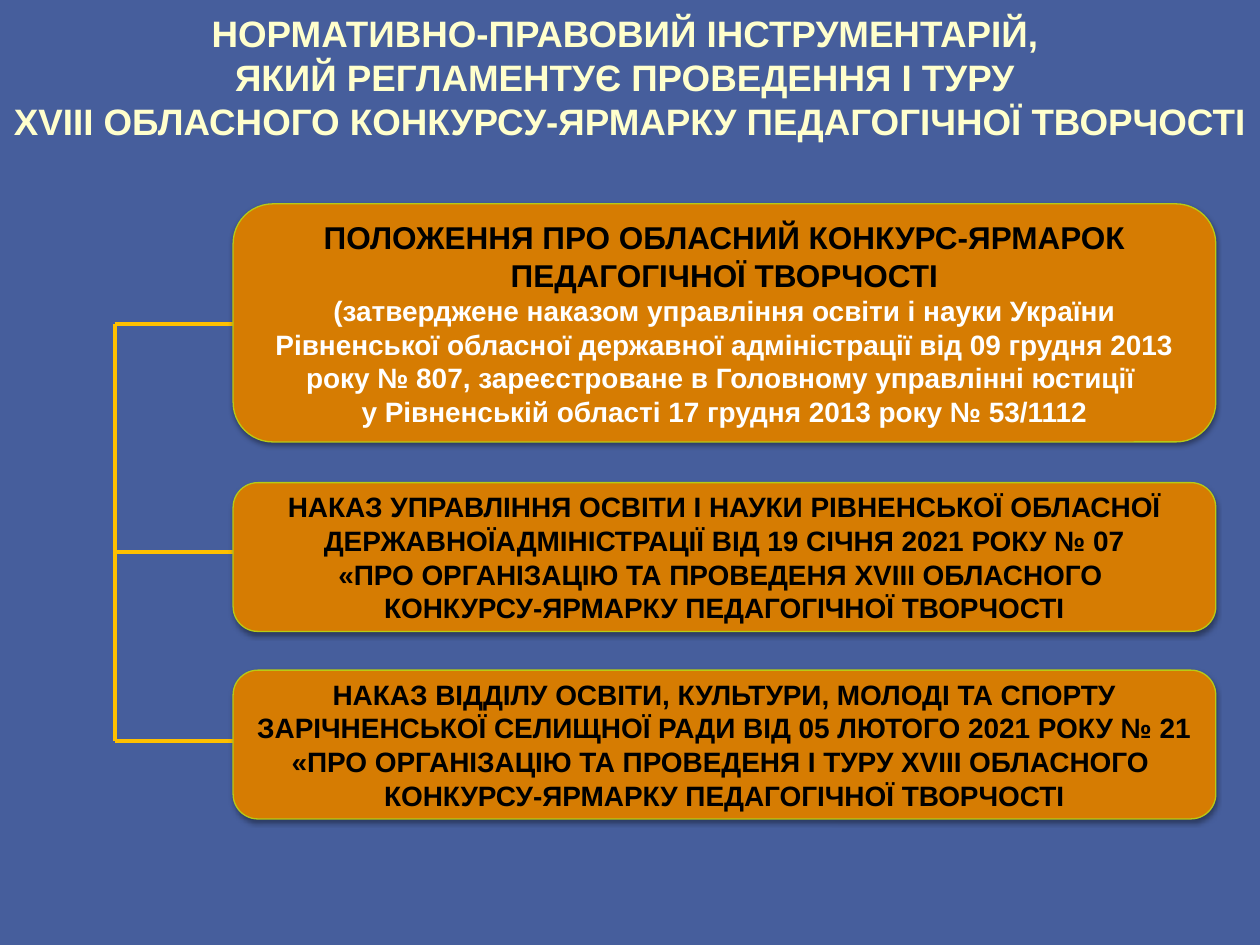
from lxml.etree import SubElement
from pptx import Presentation
from pptx.dml.color import RGBColor
from pptx.enum.shapes import MSO_CONNECTOR as Connector, MSO_SHAPE as Shape
from pptx.enum.text import MSO_ANCHOR as Anchor, MSO_AUTO_SIZE as AutoSize, PP_ALIGN as Align
from pptx.oxml.ns import qn
from pptx.util import Cm, Pt

BLUE = RGBColor(0x46, 0x5E, 0x9C)
CREAM = RGBColor(0xFF, 0xFF, 0xCC)
ORANGE = RGBColor(0xD6, 0x7C, 0x02)
LIME = RGBColor(0xB8, 0xCA, 0x15)
GOLD = RGBColor(0xFF, 0xC0, 0x00)
BLACK = RGBColor(0, 0, 0)
WHITE = RGBColor(0xFF, 0xFF, 0xFF)

TRUNK_X, BOX_LEFT, BOX_WIDTH = 2.31, 4.7, 19.81
BRANCHES = (6.53, 11.13, 14.94)

HEADING = [
    ("НОРМАТИВНО-ПРАВОВИЙ ІНСТРУМЕНТАРІЙ, ", 21, CREAM),
    ("ЯКИЙ РЕГЛАМЕНТУЄ ПРОВЕДЕННЯ І ТУРУ ", 21, CREAM),
    ("ХVIII ОБЛАСНОГО КОНКУРСУ-ЯРМАРКУ ПЕДАГОГІЧНОЇ ТВОРЧОСТІ", 21, CREAM),
]
DOCUMENTS = [
    (4.11, 4.8, [
        ("ПОЛОЖЕННЯ ПРО ОБЛАСНИЙ КОНКУРС-ЯРМАРОК", 18, BLACK),
        ("ПЕДАГОГІЧНОЇ ТВОРЧОСТІ", 18, BLACK),
        ("(затверджене наказом управління освіти і науки України "
         "Рівненської обласної державної адміністрації від 09 грудня 2013 "
         "року № 807, зареєстроване в Головному управлінні юстиції ", 16, WHITE),
        ("у Рівненській області 17 грудня 2013 року № 53/1112", 16, WHITE),
    ]),
    (9.73, 3, [
        ("НАКАЗ УПРАВЛІННЯ ОСВІТИ І НАУКИ РІВНЕНСЬКОЇ ОБЛАСНОЇ "
         "ДЕРЖАВНОЇАДМІНІСТРАЦІЇ ВІД 19 СІЧНЯ 2021 РОКУ № 07", 16, BLACK),
        ("«ПРО ОРГАНІЗАЦІЮ ТА ПРОВЕДЕНЯ ХVIII ОБЛАСНОГО ", 16, BLACK),
        ("КОНКУРСУ-ЯРМАРКУ ПЕДАГОГІЧНОЇ ТВОРЧОСТІ", 16, BLACK),
    ]),
    (13.51, 3, [
        ("НАКАЗ ВІДДІЛУ ОСВІТИ, КУЛЬТУРИ, МОЛОДІ ТА СПОРТУ", 16, BLACK),
        ("ЗАРІЧНЕНСЬКОЇ СЕЛИЩНОЇ РАДИ ВІД 05 ЛЮТОГО 2021 РОКУ № 21", 16, BLACK),
        ("«ПРО ОРГАНІЗАЦІЮ ТА ПРОВЕДЕНЯ І ТУРУ ХVIII ОБЛАСНОГО ", 16, BLACK),
        ("КОНКУРСУ-ЯРМАРКУ ПЕДАГОГІЧНОЇ ТВОРЧОСТІ", 16, BLACK),
    ]),
]


def write_lines(frame, lines):
    """Fill a text frame with centred bold paragraphs."""
    frame.word_wrap = True
    frame.auto_size = AutoSize.NONE
    frame.vertical_anchor = Anchor.MIDDLE
    frame.text = "\n".join(text for text, _, _ in lines)
    for paragraph, (_, size, color) in zip(frame.paragraphs, lines):
        paragraph.alignment = Align.CENTER
        for run in paragraph.runs:
            run.font.name = "Arial"
            run.font.size = Pt(size)
            run.font.bold = True
            run.font.color.rgb = color


def set_title(slide):
    """Place the heading across the top of the slide."""
    title = slide.shapes.title
    title.left, title.top, title.width, title.height = Cm(0), Cm(0.33), Cm(25.4), Cm(2.44)
    write_lines(title.text_frame, HEADING)
    title.text_frame.margin_left = title.text_frame.margin_right = 0


def add_shadow(box):
    """Give a box a soft shadow falling straight down."""
    box.shadow.inherit = False
    effects = box._element.spPr.find(qn("a:effectLst"))
    shadow = SubElement(effects, qn("a:outerShdw"), blurRad=str(Pt(3.1)),
                        dist=str(Pt(1.6)), dir="5400000", rotWithShape="0")
    color = SubElement(shadow, qn("a:srgbClr"), val=str(BLACK))
    SubElement(color, qn("a:alpha"), val="38000")


def add_document(slide, top, height, lines):
    """Add a rounded box describing one document."""
    box = slide.shapes.add_shape(Shape.ROUNDED_RECTANGLE, Cm(BOX_LEFT), Cm(top),
                                 Cm(BOX_WIDTH), Cm(height))
    box.fill.solid()
    box.fill.fore_color.rgb = ORANGE
    box.line.color.rgb = LIME
    box.line.width = Pt(0.75)
    add_shadow(box)
    write_lines(box.text_frame, lines)


def add_line(slide, x1, y1, x2, y2):
    """Add one straight gold line of the bracket."""
    line = slide.shapes.add_connector(Connector.STRAIGHT, Cm(x1), Cm(y1), Cm(x2), Cm(y2))
    line.line.color.rgb = GOLD
    line.line.width = Pt(2.25)
    SubElement(line._element.spPr, qn("a:effectLst"))


def main():
    """Build the slide and save it."""
    deck = Presentation()
    deck.slide_width, deck.slide_height = Cm(25.4), Cm(19.05)
    slide = deck.slides.add_slide(deck.slide_layouts[5])
    slide.background.fill.solid()
    slide.background.fill.fore_color.rgb = BLUE
    set_title(slide)
    add_line(slide, TRUNK_X, BRANCHES[0], TRUNK_X, BRANCHES[-1])
    for y in BRANCHES:
        add_line(slide, TRUNK_X, y, BOX_LEFT, y)
    for top, height, lines in DOCUMENTS:
        add_document(slide, top, height, lines)
    deck.save("out.pptx")


if __name__ == "__main__":
    main()
